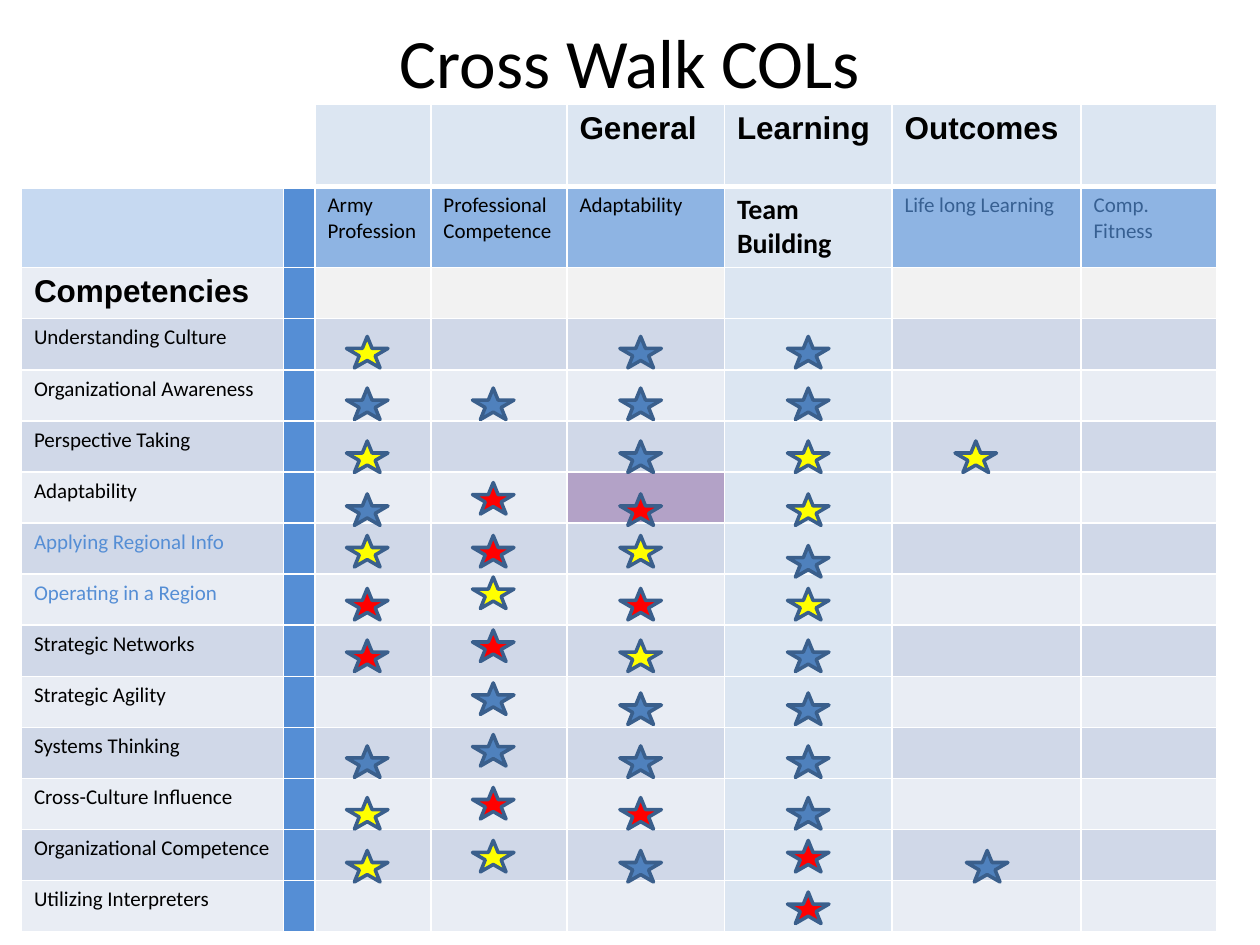
import dataclasses
import itertools

import lxml.etree
import pptx
import pptx.dml.color
import pptx.enum.shapes
import pptx.enum.text
import pptx.oxml.ns
import pptx.util

Inches = pptx.util.Inches
Pt = pptx.util.Pt

BLACK, WHITE = "000000", "FFFFFF"
PALE, BAND, LIGHT_BAND = "DCE6F2", "D0D8E8", "E9EDF4"
DIVIDER, OUTCOME, FADED = "558ED5", "8EB4E3", "376092"
BLUE, YELLOW, RED = "4F81BD", "FFFF00", "FF0000"
TEAM, ADAPTABILITY = 5, 4
COLUMN_WIDTHS = [2.08, 0.25, 0.92, 1.08, 1.25, 1.33, 1.5, 1.08]
HEADER_HEIGHTS = [0.65, 0.64]
BODY_HEIGHT = 5.27


@dataclasses.dataclass
class Label:
    text: str
    size: float = 12
    font: str = "Calibri"
    color: str = BLACK
    bold: bool = False


@dataclasses.dataclass
class StarColumn:
    left: float
    stars: list[tuple[float, str]]


def heading(text: str) -> Label:
    return Label(text, size=18, font="Arial", bold=True)


OUTCOMES = {
    2: Label("Army Profession"),
    3: Label("Professional Competence"),
    ADAPTABILITY: Label("Adaptability"),
    TEAM: Label("Team Building", size=16, bold=True),
    6: Label("Life long Learning", color=FADED),
    7: Label("Comp.\nFitness", color=FADED),
}
COMPETENCIES = [
    heading("Competencies"),
    Label("Understanding Culture"),
    Label("Organizational Awareness"),
    Label("Perspective Taking"),
    Label("Adaptability"),
    Label("Applying Regional Info", color=DIVIDER),
    Label("Operating in a Region", color=DIVIDER),
    Label("Strategic Networks"),
    Label("Strategic Agility"),
    Label("Systems Thinking"),
    Label("Cross-Culture Influence"),
    Label("Organizational Competence"),
    Label("Utilizing Interpreters"),
]
STAR_COLUMNS = [
    StarColumn(2.75, [(2.67, YELLOW), (3.08, BLUE), (3.5, YELLOW), (3.92, BLUE),
                      (4.25, YELLOW), (4.67, RED), (5.08, RED), (5.92, BLUE),
                      (6.33, YELLOW), (6.75, YELLOW)]),
    StarColumn(3.75, [(3.08, BLUE), (3.83, RED), (4.25, RED), (4.58, YELLOW),
                      (5, RED), (5.42, BLUE), (5.83, BLUE), (6.25, RED),
                      (6.67, YELLOW)]),
    StarColumn(4.92, [(2.67, BLUE), (3.08, BLUE), (3.5, BLUE), (3.92, RED),
                      (4.25, YELLOW), (4.67, RED), (5.08, YELLOW), (5.5, BLUE),
                      (5.92, BLUE), (6.33, RED), (6.75, BLUE)]),
    StarColumn(6.25, [(2.67, BLUE), (3.08, BLUE), (3.5, YELLOW), (3.92, YELLOW),
                      (4.33, BLUE), (4.67, YELLOW), (5.08, BLUE), (5.5, BLUE),
                      (5.92, BLUE), (6.33, BLUE), (6.67, RED), (7.08, RED)]),
    StarColumn(7.58, [(3.5, YELLOW)]),
    StarColumn(7.67, [(6.75, BLUE)]),
]


def rgb(value: str) -> pptx.dml.color.RGBColor:
    return pptx.dml.color.RGBColor.from_string(value)


def write_text(frame, text: str, *, size: float, font: str = "Calibri",
               color: str = BLACK, bold: bool = False, align=None) -> None:
    frame.text = text
    for paragraph in frame.paragraphs:
        paragraph.alignment = align
        for run in paragraph.runs:
            run.font.size = Pt(size)
            run.font.name = font
            run.font.bold = bold
            run.font.color.rgb = rgb(color)


def draw_borders(cell, row: int) -> None:
    widths = {"L": 1, "R": 1, "T": 3 if row == 1 else 1, "B": 3 if row == 0 else 1}
    qn = pptx.oxml.ns.qn
    properties = cell._tc.get_or_add_tcPr()
    for side, width in widths.items():
        line = lxml.etree.SubElement(properties, qn(f"a:ln{side}"), w=str(Pt(width)))
        fill = lxml.etree.SubElement(line, qn("a:solidFill"))
        lxml.etree.SubElement(fill, qn("a:srgbClr"), val=WHITE)


def cell_fill(row: int, column: int) -> str:
    if row == 0:
        return WHITE if column < 2 else PALE
    if column == 1:
        return DIVIDER
    if column == TEAM:
        return PALE
    if row == 1:
        return "C6D9F1" if column == 0 else OUTCOME
    if row == 2 and column > 0:
        return "F2F2F2"
    if (row, column) == (6, ADAPTABILITY):
        return "B3A2C7"
    return BAND if row % 2 else LIGHT_BAND


def draw_crosswalk(slide) -> None:
    competency_height = BODY_HEIGHT / len(COMPETENCIES)
    heights = HEADER_HEIGHTS + [competency_height] * len(COMPETENCIES)
    labels = {(0, 4): heading("General"), (0, 5): heading("Learning"),
              (0, 6): heading("Outcomes")}
    labels.update({(1, column): label for column, label in OUTCOMES.items()})
    labels.update({(row, 0): label for row, label in enumerate(COMPETENCIES, 2)})

    crosswalk = slide.shapes.add_table(
        len(heights), len(COLUMN_WIDTHS), Inches(0.17), Inches(0.83),
        Inches(sum(COLUMN_WIDTHS)), Inches(sum(heights))).table
    for column, width in zip(crosswalk.columns, COLUMN_WIDTHS):
        column.width = Inches(width)
    for row, height in zip(crosswalk.rows, heights):
        row.height = Inches(height)
    for row, column in itertools.product(range(len(heights)), range(len(COLUMN_WIDTHS))):
        cell = crosswalk.cell(row, column)
        draw_borders(cell, row)
        cell.fill.solid()
        cell.fill.fore_color.rgb = rgb(cell_fill(row, column))
        if (row, column) in labels:
            write_text(cell.text_frame, **dataclasses.asdict(labels[row, column]))


def draw_star(slide, left: float, top: float, color: str) -> None:
    star = slide.shapes.add_shape(
        pptx.enum.shapes.MSO_SHAPE.STAR_5_POINT,
        Inches(left), Inches(top), Inches(0.33), Inches(0.25))
    star.shadow.inherit = False
    star.fill.solid()
    star.fill.fore_color.rgb = rgb(color)
    star.line.color.rgb = rgb("3A5F8C")
    star.line.width = Pt(2)


def main() -> None:
    presentation = pptx.Presentation()
    presentation.slide_width, presentation.slide_height = Inches(10), Inches(7.5)
    slide = presentation.slides.add_slide(presentation.slide_layouts[5])

    title = slide.shapes.title
    title.left, title.top = Inches(0.5), Inches(0.3)
    title.width, title.height = Inches(9), Inches(0.37)
    title.text_frame.auto_size = pptx.enum.text.MSO_AUTO_SIZE.NONE
    title.text_frame.vertical_anchor = pptx.enum.text.MSO_ANCHOR.MIDDLE
    write_text(title.text_frame, "Cross Walk COLs", size=39.6,
               align=pptx.enum.text.PP_ALIGN.CENTER)

    draw_crosswalk(slide)
    for outcome in STAR_COLUMNS:
        for top, color in outcome.stars:
            draw_star(slide, outcome.left, top, color)
    presentation.save("out.pptx")


if __name__ == "__main__":
    main()
